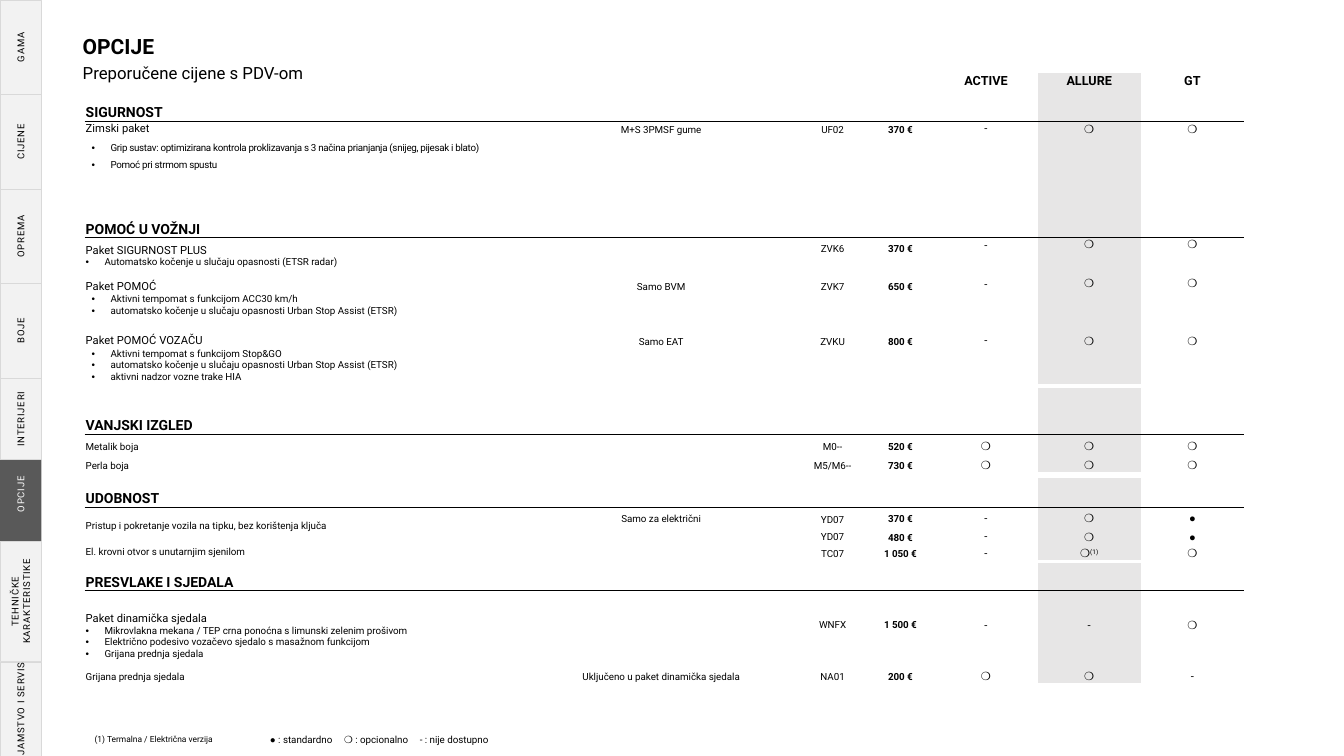
import lxml.etree
import pptx
import pptx.dml.color
import pptx.enum.shapes
import pptx.enum.text
import pptx.oxml.ns
import pptx.util

Pt = pptx.util.Pt
RGBColor = pptx.dml.color.RGBColor
ANCHOR = pptx.enum.text.MSO_ANCHOR
ALIGN = pptx.enum.text.PP_ALIGN
qn = pptx.oxml.ns.qn
BLACK = RGBColor(0x00, 0x00, 0x00)
WHITE = RGBColor(0xFF, 0xFF, 0xFF)
ALLURE_GREY = RGBColor(0xE7, 0xE6, 0xE6)
TAB_GREY = RGBColor(0xF2, 0xF2, 0xF2)
TAB_LINE = RGBColor(0xD9, 0xD9, 0xD9)
ACTIVE_TAB = RGBColor(0x59, 0x59, 0x59)
NO_GRID_STYLE = "{2D5ABB26-0587-4C30-8999-92F81FD0307C}"
SYMBOLS = ("❍", "●")
COLUMN_WIDTHS = [313.5, 196.5, 48.5, 48.5, 73.75, 73.75, 73.75]
BLANK_ROW = [""] * 7


def add_text(paragraph, text, size=7, font="Roboto", color=BLACK, bold=False, tracking=0, raised=False):
    run = paragraph.add_run()
    run.text = text
    run.font.size = Pt(size)
    run.font.name = font
    run.font.bold = bold
    run.font.color.rgb = color
    properties = run.font._element
    if tracking:
        properties.set("spc", str(round(tracking * 100)))
    if raised:
        properties.set("baseline", "30000")


def add_bullet(paragraph):
    properties = paragraph._p.get_or_add_pPr()
    properties.set("marL", str(Pt(13.5)))
    properties.set("indent", str(-Pt(13.5)))
    lxml.etree.SubElement(properties, qn("a:buFont")).set("typeface", "Arial")
    lxml.etree.SubElement(properties, qn("a:buChar")).set("char", "•")


presentation = pptx.Presentation()
presentation.slide_width = Pt(960)
presentation.slide_height = Pt(540)
slide = presentation.slides.add_slide(presentation.slide_layouts[6])

legend = slide.shapes.add_textbox(Pt(185.75), Pt(520.5), Pt(281.5), Pt(16)).text_frame
legend.word_wrap = True
legend_line = legend.paragraphs[0]
tab_list = lxml.etree.SubElement(legend_line._p.get_or_add_pPr(), qn("a:tabLst"))
for position in (53, 107):
    tab = lxml.etree.SubElement(tab_list, qn("a:tab"))
    tab.set("pos", str(Pt(position)))
    tab.set("algn", "l")
for text, font in [("●", "Arial"), (" : standardno\t", "Roboto"), ("❍", "Arial"),
                   (" : opcionalno\t- : nije dostupno", "Roboto")]:
    add_text(legend_line, text, font=font)

footnote = slide.shapes.add_textbox(Pt(60.5), Pt(520.5), Pt(216), Pt(14.5)).text_frame
footnote.word_wrap = True
add_text(footnote.paragraphs[0], "(1) Termalna / Električna verzija", size=6)

sections = [
    dict(
        top=52, heights=[18, 16.5, 10, 34, 14.5], heading_row=1,
        rows=[
            ["", "", "", "", "ACTIVE", "ALLURE", "GT"],
            ["SIGURNOST"] + BLANK_ROW[1:],
            ["Zimski paket", "M+S 3PMSF gume", "UF02", "370 €", "-", "❍", "❍"],
            [["• Grip sustav: optimizirana kontrola proklizavanja s 3 načina prianjanja (snijeg, pijesak i blato)",
              "• Pomoć pri strmom spustu"]] + BLANK_ROW[1:],
            BLANK_ROW,
        ],
        layout={(0, column): dict(anchor=ANCHOR.TOP) for column in (4, 5, 6)}
        | {(3, 0): dict(anchor=ANCHOR.TOP, line_spacing=1.5, tracking=-0.2)},
    ),
    dict(
        top=130.25, heights=[39.5, 12, 13, 14.5, 26, 13, 25.5],
        rows=[
            ["POMOĆ U VOŽNJI"] + BLANK_ROW[1:],
            [["Paket SIGURNOST PLUS", "• Automatsko kočenje u slučaju opasnosti (ETSR radar)", "Paket POMOĆ"],
             "Samo BVM", "ZVK6", "370 €", ["-", "-"], ["❍", "❍"], ["❍", "❍"]],
            BLANK_ROW,
            ["", "", "ZVK7", "650 €", "", "", ""],
            [["• Aktivni tempomat s funkcijom ACC30 km/h",
              "• automatsko kočenje u slučaju opasnosti Urban Stop Assist (ETSR)"]] + BLANK_ROW[1:],
            ["Paket POMOĆ VOZAČU", "Samo EAT", "ZVKU", "800 €", "-", "❍", "❍"],
            [["• Aktivni tempomat s funkcijom Stop&GO",
              "• automatsko kočenje u slučaju opasnosti Urban Stop Assist (ETSR)",
              "• aktivni nadzor vozne trake HIA"]] + BLANK_ROW[1:],
        ],
        merges=[(1, column, 3, column) for column in (0, 1, 4, 5, 6)] + [(2, 2, 2, 3)],
        layout={(1, column): dict(anchor=ANCHOR.TOP, gap=18.75) for column in (4, 5, 6)}
        | {(1, 0): dict(gap=8.25)},
    ),
    dict(
        top=277.25, heights=[33, 13.5, 13.5],
        rows=[
            ["VANJSKI IZGLED"] + BLANK_ROW[1:],
            ["Metalik boja", "", "M0--", "520 €", "❍", "❍", "❍"],
            ["Perla boja", "", "M5/M6--", "730 €", "❍", "❍", "❍"],
        ],
    ),
    dict(
        top=341.25, heights=[21, 13, 12.5, 12],
        rows=[
            ["UDOBNOST"] + BLANK_ROW[1:],
            ["Pristup i pokretanje vozila na tipku, bez korištenja ključa", "Samo za električni",
             ["YD07", "YD07"], "370 €", "-", "❍", "●"],
            ["", "", "", "480 €", "-", "❍", "●"],
            ["El. krovni otvor s unutarnjim sjenilom", "", "TC07", "1 050 €", "-", "❍(1)", "❍"],
        ],
        merges=[(1, 0, 2, 0), (1, 2, 2, 2)],
        layout={(1, 0): dict(anchor=ANCHOR.MIDDLE), (3, 0): dict(anchor=ANCHOR.MIDDLE),
                (1, 2): dict(anchor=ANCHOR.MIDDLE, line_spacing=1.5)},
    ),
    dict(
        top=402, heights=[20, 49, 17],
        rows=[
            ["PRESVLAKE I SJEDALA"] + BLANK_ROW[1:],
            [["Paket dinamička sjedala", "• Mikrovlakna mekana / TEP crna ponoćna s limunski zelenim prošivom",
              "• Električno podesivo vozačevo sjedalo s masažnom funkcijom", "• Grijana prednja sjedala"],
             "", "WNFX", "1 500 €", "-", "-", "❍"],
            ["Grijana prednja sjedala", "Uključeno u paket dinamička sjedala", "NA01", "200 €", "❍", "❍", "-"],
        ],
        layout={(1, column): dict(anchor=ANCHOR.MIDDLE) for column in range(2, 7)},
    ),
]

for section in sections:
    heights = section["heights"]
    heading_row = section.get("heading_row", 0)
    frame = slide.shapes.add_table(len(heights), 7, Pt(60.5), Pt(section["top"]),
                                   Pt(sum(COLUMN_WIDTHS)), Pt(sum(heights)))
    table = frame.table
    table.first_row = False
    table.horz_banding = False
    table._tbl.tblPr.find(qn("a:tableStyleId")).text = NO_GRID_STYLE
    for column, width in zip(table.columns, COLUMN_WIDTHS):
        column.width = Pt(width)
    for top, left, bottom, right in section.get("merges", []):
        table.cell(top, left).merge(table.cell(bottom, right))

    for row_index, row in enumerate(section["rows"]):
        table.rows[row_index].height = Pt(heights[row_index])
        for column_index, content in enumerate(row):
            cell = table.cell(row_index, column_index)
            layout = section.get("layout", {}).get((row_index, column_index), {})
            lines = content if isinstance(content, list) else [content]
            only_bullets = lines[0].startswith("•")
            cell.margin_left = Pt(5 if only_bullets else 0.75)
            cell.margin_right = cell.margin_top = Pt(0.75)
            cell.margin_bottom = Pt(0)
            cell.vertical_anchor = layout.get("anchor", ANCHOR.TOP if only_bullets else ANCHOR.BOTTOM)
            if row_index == heading_row:
                border = lxml.etree.SubElement(cell._tc.get_or_add_tcPr(), qn("a:lnB"))
                border.set("w", str(Pt(0.5)))
                border_fill = lxml.etree.SubElement(border, qn("a:solidFill"))
                lxml.etree.SubElement(border_fill, qn("a:srgbClr")).set("val", str(BLACK))
            if column_index == 5:
                cell.fill.solid()
                cell.fill.fore_color.rgb = ALLURE_GREY
            else:
                cell.fill.background()

            for line_index, line in enumerate(lines):
                paragraph = cell.text_frame.paragraphs[0] if line_index == 0 else cell.text_frame.add_paragraph()
                if not line:
                    lxml.etree.SubElement(paragraph._p, qn("a:endParaRPr")).set("sz", "600")
                    continue
                paragraph.alignment = ALIGN.CENTER if column_index else ALIGN.LEFT
                if line.startswith("•"):
                    add_bullet(paragraph)
                if "line_spacing" in layout:
                    paragraph.line_spacing = layout["line_spacing"]
                if "gap" in layout and line_index == len(lines) - 1:
                    paragraph.space_before = Pt(layout["gap"])
                size = 8 if column_index > 3 or line.startswith(("Paket", "Zimski")) else 7
                if row_index <= heading_row:
                    size = 10 if row_index == heading_row else 9
                note = "(1)" if line.endswith("(1)") else ""
                add_text(paragraph, line.removeprefix("• ").removesuffix("(1)"), size=size,
                         font="Arial" if line.startswith(SYMBOLS) else "Roboto",
                         bold=row_index <= heading_row or column_index == 3,
                         tracking=layout.get("tracking", 0))
                if note:
                    add_text(paragraph, note, size=size, raised=True)

title = slide.shapes.add_textbox(Pt(52), Pt(23.75), Pt(345), Pt(39.5)).text_frame
title.word_wrap = True
add_text(title.paragraphs[0], "OPCIJE", size=15, bold=True)
subtitle = title.add_paragraph()
subtitle.space_before = Pt(6)
add_text(subtitle, "Preporučene cijene s PDV-om", size=12)
for paragraph in title.paragraphs:
    paragraph.line_spacing = 0.8

TAB_THICKNESS = 29.5
navigation_tabs = [
    ("OPCIJE", 353, 67.5), ("GAMA", 33.75, 67.5), ("CIJENE", 101.25, 67.5), ("OPREMA", 168.75, 67.5),
    ("BOJE", 236.25, 67.5), ("INTERIJERI", 299.25, 58), ("TEHNIČKE KARAKTERISTIKE", 429.5, 85.5),
    ("JAMSTVO I SERVIS", 506.5, 67.5),
]
for label, centre, length in navigation_tabs:
    active = label == "OPCIJE"
    shape = slide.shapes.add_shape(pptx.enum.shapes.MSO_SHAPE.RECTANGLE, Pt((TAB_THICKNESS - length) / 2),
                                   Pt(centre - TAB_THICKNESS / 2), Pt(length), Pt(TAB_THICKNESS))
    shape.rotation = 270
    shape.shadow.inherit = False
    shape.fill.solid()
    shape.fill.fore_color.rgb = ACTIVE_TAB if active else TAB_GREY
    if active:
        shape.line.fill.background()
    else:
        shape.line.color.rgb = TAB_LINE
        shape.line.width = Pt(0.5)
    text_frame = shape.text_frame
    text_frame.margin_left = text_frame.margin_right = Pt(0)
    text_frame.word_wrap = length > 80
    text_frame.vertical_anchor = ANCHOR.MIDDLE
    text_frame.paragraphs[0].alignment = ALIGN.CENTER
    add_text(text_frame.paragraphs[0], label, size=6.8, color=WHITE if active else BLACK, tracking=0.5)

presentation.save("out.pptx")
